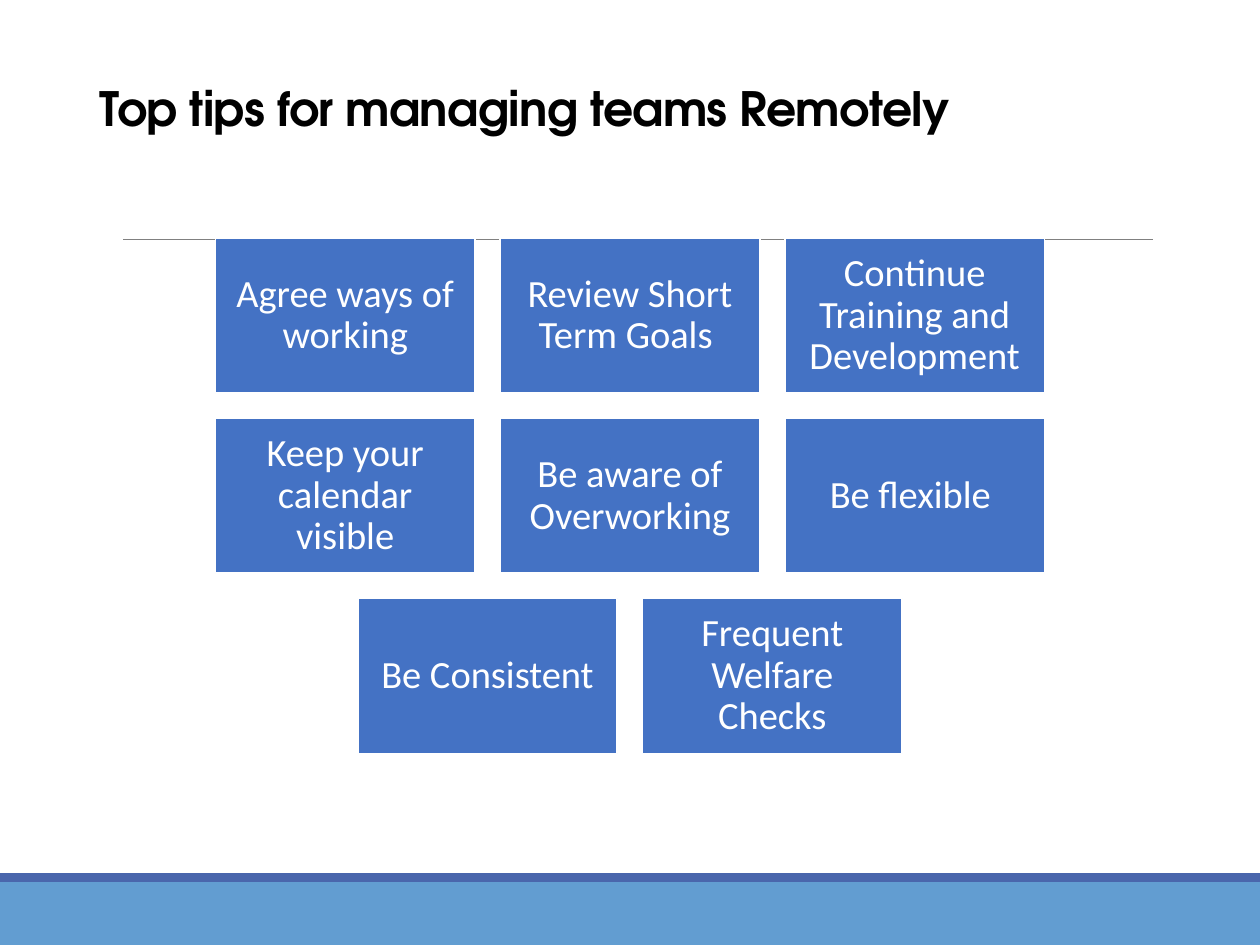
import pptx
import pptx.util
import pptx.dml.color
import pptx.enum.shapes
import pptx.enum.text
import pptx.oxml.ns
from dataclasses import dataclass
from lxml import etree

Inches = pptx.util.Inches
Pt = pptx.util.Pt
Align = pptx.enum.text.PP_ALIGN
Anchor = pptx.enum.text.MSO_ANCHOR


@dataclass(frozen=True)
class Theme:
    title_font: str = "TeX Gyre Adventor"
    body_font: str = "Calibri"
    title_size: float = 27
    card_size: float = 22
    black: str = "000000"
    white: str = "FFFFFF"
    card: str = "4472C4"
    footer: str = "629DD1"
    footer_edge: str = "4A66AC"
    rule: str = "808080"


class Deck:
    def __init__(self, theme):
        self.theme = theme
        self.prs = pptx.Presentation()
        self.prs.slide_width = Inches(10)
        self.prs.slide_height = Inches(7.5)
        self.s = None

    def color(self, value):
        return pptx.dml.color.RGBColor.from_string(value)

    def new_slide(self):
        self.s = self.prs.slides.add_slide(self.prs.slide_layouts[5])

    def run(self, p, text, font, size, color, bold=False):
        r = p.add_run()
        r.text = text
        r.font.name = font
        r.font.size = Pt(size)
        r.font.bold = bold
        r.font.color.rgb = self.color(color)
        return r

    def title(self, text, x, y, w, h):
        t = self.theme
        sp = self.s.shapes.title
        sp.left, sp.top, sp.width, sp.height = map(Inches, (x, y, w, h))
        tf = sp.text_frame
        tf.word_wrap = True
        tf.auto_size = pptx.enum.text.MSO_AUTO_SIZE.NONE
        tf.vertical_anchor = Anchor.BOTTOM
        p = tf.paragraphs[0]
        p.alignment = Align.LEFT
        p.line_spacing = 0.85
        r = self.run(p, text, t.title_font, t.title_size, t.black, True)
        r.font._element.set("spc", "-40")

    def rect(self, x, y, w, h, fill):
        sp = self.s.shapes.add_shape(
            pptx.enum.shapes.MSO_SHAPE.RECTANGLE, *map(Inches, (x, y, w, h)))
        sp.shadow.inherit = False
        sp.fill.solid()
        sp.fill.fore_color.rgb = self.color(fill)
        sp.line.fill.background()
        return sp

    def rule(self, x1, x2, y):
        c = self.s.shapes.add_connector(
            pptx.enum.shapes.MSO_CONNECTOR.STRAIGHT, *map(Inches, (x1, y, x2, y)))
        c.line.color.rgb = self.color(self.theme.rule)
        c.line.width = Pt(0.5)
        etree.SubElement(c._element.spPr, pptx.oxml.ns.qn("a:effectLst"))

    def card(self, text, x, y, w, h):
        t = self.theme
        sp = self.rect(x, y, w, h, t.card)
        sp.line.color.rgb = self.color(t.white)
        sp.line.width = Pt(1)
        tf = sp.text_frame
        tf.word_wrap = True
        tf.vertical_anchor = Anchor.MIDDLE
        tf.margin_left = tf.margin_right = Inches(0.09)
        tf.margin_top = tf.margin_bottom = Inches(0.09)
        p = tf.paragraphs[0]
        p.alignment = Align.CENTER
        p.line_spacing = 0.9
        self.run(p, text, t.body_font, t.card_size, t.white)

    def card_rows(self, rows, center, top, w, h, gap):
        for i, row in enumerate(rows):
            left = center - (len(row) * (w + gap) - gap) / 2
            for j, text in enumerate(row):
                self.card(text, left + j * (w + gap), top + i * (h + gap), w, h)


def main():
    theme = Theme()
    deck = Deck(theme)
    deck.new_slide()
    deck.rect(0, 7, 10, 0.5, theme.footer)
    deck.rect(0, 6.93, 10, 0.07, theme.footer_edge)
    deck.rule(0.98, 9.15, 1.9)
    deck.title("Top tips for managing teams Remotely", 0.69, 0.5, 8.62, 0.63)
    rows = [
        ["Agree ways of working", "Review Short Term Goals ",
         "Continue Training and Development"],
        ["Keep your calendar visible", "Be aware of Overworking", "Be flexible "],
        ["Be Consistent", "Frequent Welfare Checks"],
    ]
    deck.card_rows(rows, center=5, top=1.89, w=2.06, h=1.23, gap=0.2)
    deck.prs.save("out.pptx")


if __name__ == "__main__":
    main()
